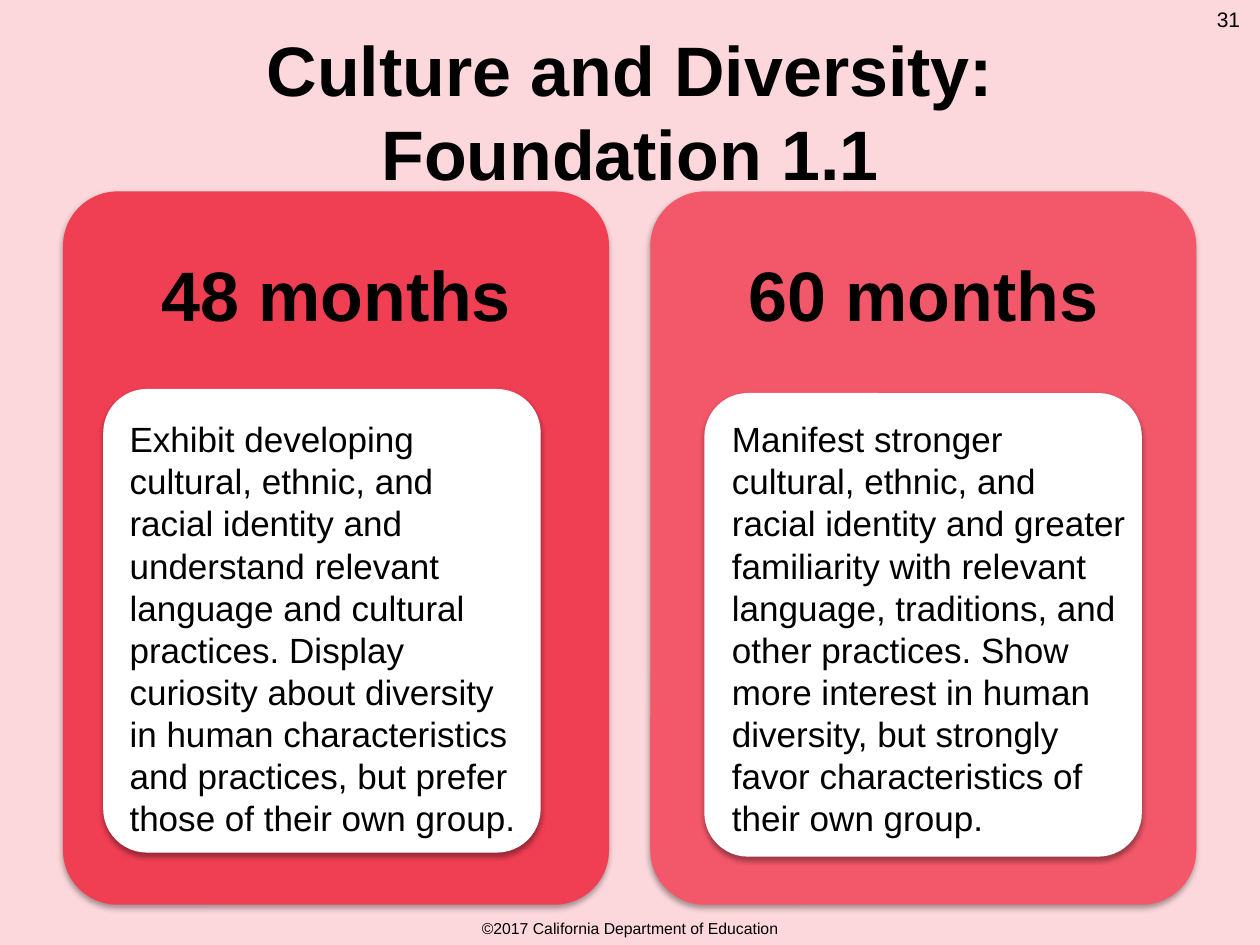
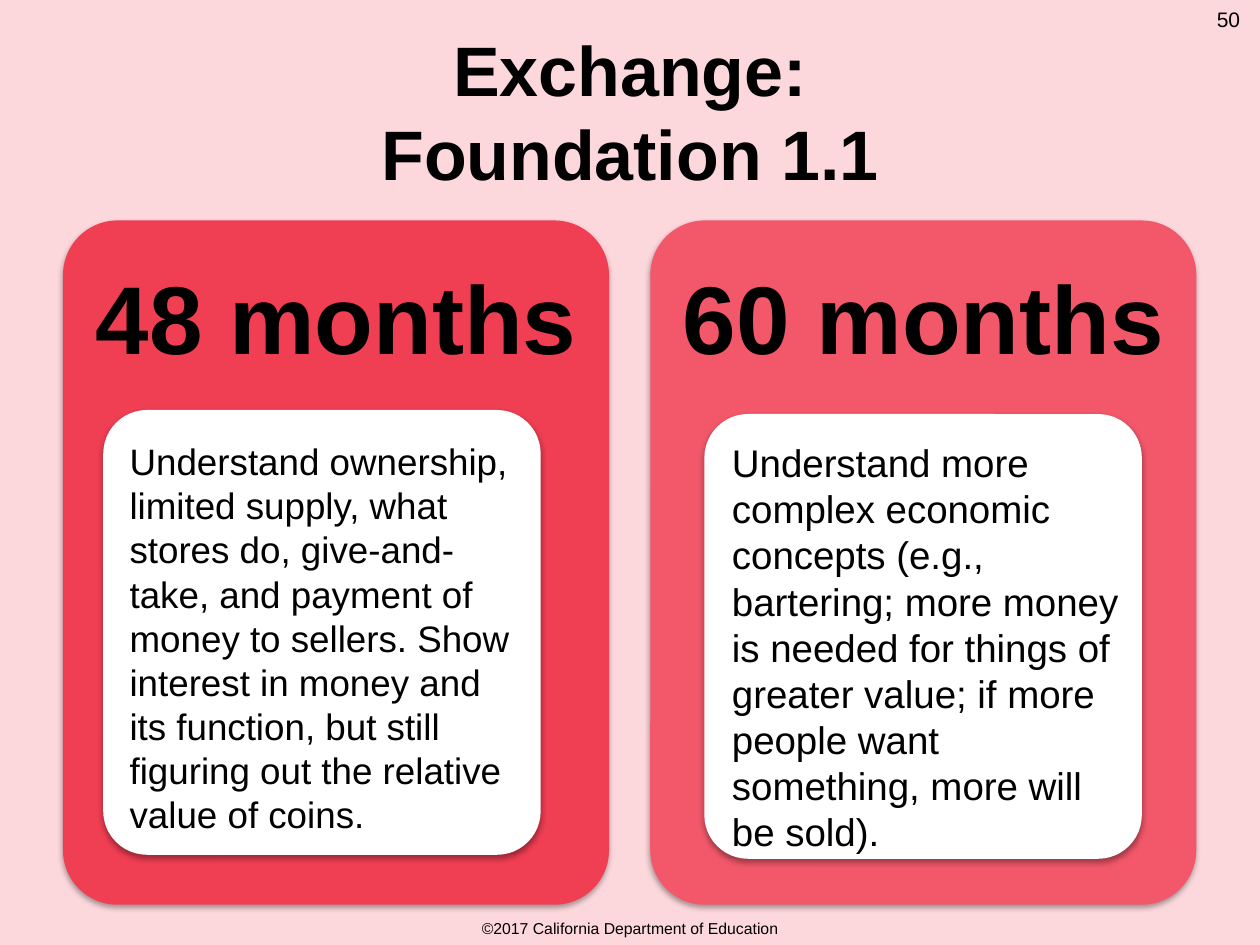
from dataclasses import dataclass

import pptx
import pptx.dml.color
import pptx.enum.shapes
import pptx.enum.text
import pptx.oxml
import pptx.oxml.ns
import pptx.util
from lxml import etree

Pt = pptx.util.Pt
ALIGN = pptx.enum.text.PP_ALIGN
ANCHOR = pptx.enum.text.MSO_ANCHOR


@dataclass(frozen=True)
class Theme:
    font: str = "Arial"
    background: str = "FCD8DC"
    ink: str = "000000"
    card: str = "FFFFFF"
    panels: tuple = ("F03E53", "F2586A")
    title_size: int = 40
    number_size: int = 12
    footer_size: int = 9


THEME = Theme()
WIDTH, HEIGHT = 720, 540

# Column geometry, in points
PANEL_LEFT, PANEL_WIDTH, PANEL_PITCH, PANEL_BOTTOM = 36, 312, 335.6, 517
CARD_LEFTS, CARD_WIDTH, CARD_DROPS = (59, 402.5), 250, (0, 2.3)
BODY_LEFTS, BODY_DROP, BODY_INDENT = (57.6, 401.8), 13, 9.36
HEADING_SHARE, CARD_START, CARD_SHARE = 0.3, 0.277, 0.65

FOOTER = "©2017 California Department of Education"
AGES = ("48 months", "60 months")

FOUNDATIONS = [
    dict(
        number="31", title="Culture and Diversity:\vFoundation 1.1",
        panel_top=109.4, age_size=40, age_inset=12, body_sizes=(20, 20),
        bodies=(
            "Exhibit developing cultural, ethnic, and racial identity and "
            "understand relevant language and cultural practices. Display "
            "curiosity about diversity in human characteristics and "
            "practices, but prefer those of their own group.",
            "Manifest stronger cultural, ethnic, and racial identity and "
            "greater familiarity with relevant language, traditions, and "
            "other practices. Show more interest in human diversity, but "
            "strongly favor characteristics of their own group.",
        ),
    ),
    dict(
        number="50", title="Exchange:\vFoundation 1.1",
        panel_top=126, age_size=55, age_inset=16.5, body_sizes=(21, 22),
        bodies=(
            "Understand ownership, limited supply, what stores do, "
            "give-and- take, and payment of money to sellers. Show interest "
            "in money and its function, but still figuring out the relative "
            "value of coins.",
            "Understand more complex economic concepts (e.g., bartering; "
            "more money is needed for things of greater value; if more "
            "people want something, more will be sold).",
        ),
    ),
]


class Deck:
    def __init__(self, theme):
        self.theme = theme
        self.presentation = pptx.Presentation()
        self.presentation.slide_width = Pt(WIDTH)
        self.presentation.slide_height = Pt(HEIGHT)
        self.slide = None

    def color(self, value):
        return pptx.dml.color.RGBColor.from_string(value)

    def new_slide(self):
        self.slide = self.presentation.slides.add_slide(
            self.presentation.slide_layouts[6])
        fill = self.slide.background.fill
        fill.solid()
        fill.fore_color.rgb = self.color(self.theme.background)

    def text(self, words, left, top, width, height, size, bold=False,
             align=ALIGN.CENTER, anchor=ANCHOR.MIDDLE, inset=None,
             indent=0, line_spacing=None):
        box = self.slide.shapes.add_textbox(
            Pt(left), Pt(top), Pt(width), Pt(height))
        frame = box.text_frame
        frame.word_wrap = True
        frame.vertical_anchor = anchor
        if inset is not None:
            frame.margin_left = frame.margin_right = Pt(inset)
            frame.margin_top = frame.margin_bottom = Pt(inset)
        frame.text = words
        paragraph = frame.paragraphs[0]
        paragraph.alignment = align
        paragraph.line_spacing = line_spacing
        if indent:
            paragraph._p.get_or_add_pPr().set("marL", str(Pt(indent)))
        for run in paragraph.runs:
            run.font.name = self.theme.font
            run.font.size = Pt(size)
            run.font.bold = bold
            run.font.color.rgb = self.color(self.theme.ink)

    def rounded(self, left, top, width, height, fill):
        shape = self.slide.shapes.add_shape(
            pptx.enum.shapes.MSO_SHAPE.ROUNDED_RECTANGLE,
            Pt(left), Pt(top), Pt(width), Pt(height))
        shape.adjustments[0] = 0.1
        shape.fill.solid()
        shape.fill.fore_color.rgb = self.color(fill)
        shape.line.fill.background()
        self.soft_shadow(shape)

    def soft_shadow(self, shape):
        shape.shadow.inherit = False
        qn = pptx.oxml.ns.qn
        effects = shape._element.spPr.find(qn("a:effectLst"))
        shadow = etree.SubElement(
            effects, qn("a:outerShdw"), blurRad=str(Pt(3.1)),
            dist=str(Pt(1.8)), dir="5400000", rotWithShape="0")
        tint = etree.SubElement(shadow, qn("a:srgbClr"), val=self.theme.ink)
        etree.SubElement(tint, qn("a:alpha"), val="35000")

    def age_column(self, column, foundation):
        top = foundation["panel_top"]
        height = PANEL_BOTTOM - top
        left = PANEL_LEFT + column * PANEL_PITCH
        card_top = top + CARD_START * height
        card_height = CARD_SHARE * height

        # Panel with its age heading
        self.rounded(left, top, PANEL_WIDTH, height,
                     self.theme.panels[column])
        self.text(AGES[column], left, top, PANEL_WIDTH,
                  HEADING_SHARE * height, foundation["age_size"], bold=True,
                  inset=foundation["age_inset"], line_spacing=0.9)

        # White card with the description
        self.rounded(CARD_LEFTS[column], card_top + CARD_DROPS[column],
                     CARD_WIDTH, card_height, self.theme.card)
        self.text(foundation["bodies"][column], BODY_LEFTS[column],
                  card_top + BODY_DROP, CARD_WIDTH, card_height - BODY_DROP,
                  foundation["body_sizes"][column], align=ALIGN.LEFT,
                  anchor=ANCHOR.TOP, indent=BODY_INDENT)

    def foundation_slide(self, foundation):
        self.new_slide()
        # Footer and title
        self.text(FOOTER, 0, 521.3, WIDTH, 18.7, self.theme.footer_size)
        self.text(foundation["title"], 36, 0, 648, 126,
                  self.theme.title_size, bold=True)
        # One column per age
        for column in range(len(AGES)):
            self.age_column(column, foundation)
        # Slide number
        self.text(foundation["number"], 684, 0, 36, 28.8,
                  self.theme.number_size, anchor=ANCHOR.TOP)


def main():
    deck = Deck(THEME)
    for foundation in FOUNDATIONS:
        deck.foundation_slide(foundation)
    deck.presentation.save("out.pptx")


if __name__ == "__main__":
    main()
